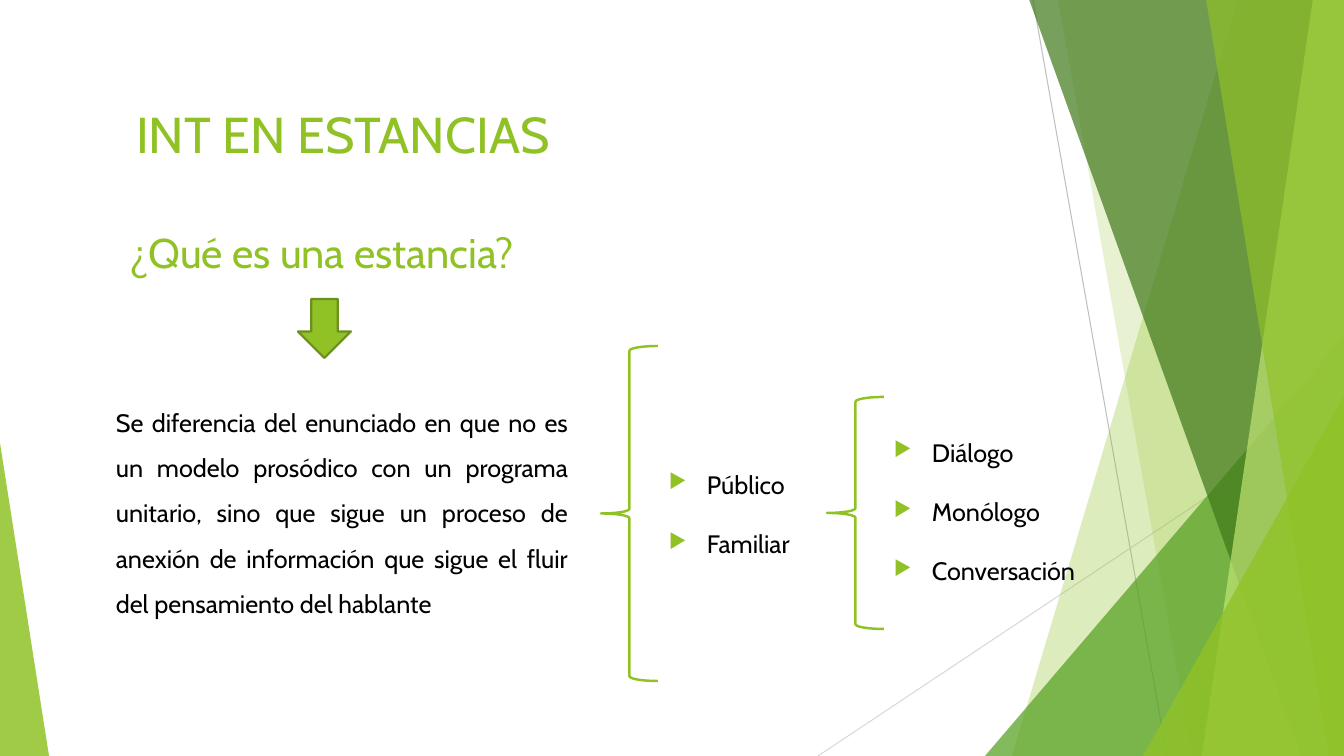
from dataclasses import dataclass

from lxml import etree
from pptx import Presentation
from pptx.dml.color import RGBColor
from pptx.enum.shapes import MSO_CONNECTOR, MSO_SHAPE
from pptx.enum.text import MSO_ANCHOR, MSO_AUTO_SIZE, PP_ALIGN
from pptx.oxml.ns import qn
from pptx.util import Emu, Pt

STRAIGHT = MSO_CONNECTOR.STRAIGHT
TRIANGLE = MSO_SHAPE.ISOSCELES_TRIANGLE
DOWN_ARROW = MSO_SHAPE.DOWN_ARROW
LEFT_BRACE = MSO_SHAPE.LEFT_BRACE
TOP = MSO_ANCHOR.TOP
NO_AUTOFIT = MSO_AUTO_SIZE.NONE
LEFT, JUSTIFY = PP_ALIGN.LEFT, PP_ALIGN.JUSTIFY

SCALE = 914400 / 100.8
WIDTH, HEIGHT = 1344, 756
TITLE_ONLY = 5
FONT = "Cabin"
COLORS = {
    "green": "90C226",
    "leaf": "54A021",
    "forest": "3F7819",
    "lime": "C0E474",
    "arrow_edge": "6B901C",
    "gray": "BFBFBF",
    "light_gray": "D9D9D9",
    "black": "000000",
}


@dataclass(frozen=True)
class Box:
    left: int
    top: int
    width: int
    height: int


@dataclass(frozen=True)
class Ray:
    start: tuple[int, int]
    end: tuple[int, int]
    color: str


@dataclass(frozen=True)
class Band:
    """Strip reaching the right edge of the slide."""
    top_x: int
    bottom_x: int
    color: str
    opacity: int


@dataclass(frozen=True)
class Wedge:
    box: Box
    apex: int
    color: str
    opacity: int


@dataclass(frozen=True)
class TextBlock:
    box: Box
    lines: tuple[str, ...]
    size: float = 18
    color: str = "black"
    align: PP_ALIGN = JUSTIFY
    spacing: float = 1.5
    bullets: bool = False


RAYS = [
    Ray((1033, 0), (1167, HEIGHT), "gray"),
    Ray((WIDTH, 406), (818, HEIGHT), "light_gray"),
]
FACETS = [
    Band(1238, 1012, "green", 30),
    Band(1058, 1192, "green", 20),
    Wedge(Box(985, 336, 359, 420), 1, "leaf", 72),
    Band(1029, 1301, "forest", 70),
    Band(1313, 1202, "lime", 70),
    Band(1206, 1329, "green", 65),
    Wedge(Box(1143, 396, 201, 360), 1, "green", 80),
    Wedge(Box(0, 443, 49, 313), 0, "green", 85),
]
TITLE = TextBlock(Box(126, 98, 451, 96), ("INT EN ESTANCIAS",), 36, "green", LEFT, 1)
TEXTS = [
    TextBlock(Box(120, 222, 530, 58), ("¿Qué es una estancia?",), 29.6, "green", LEFT, 1),
    TextBlock(Box(106, 387, 472, 279), (
        "Se diferencia del enunciado en que no es un modelo prosódico con un "
        "programa unitario, sino que sigue un proceso de anexión de información "
        "que sigue el fluir del pensamiento del hablante",)),
    TextBlock(Box(659, 449, 167, 129), ("Público", "Familiar"), bullets=True),
    TextBlock(Box(884, 417, 226, 192), ("Diálogo", "Monólogo", "Conversación"), bullets=True),
]
ARROW = Box(298, 299, 53, 59)
BRACES = [Box(601, 346, 57, 335), Box(827, 397, 57, 232)]


def px(length: int) -> Emu:
    return Emu(round(length * SCALE))


def rgb(name: str) -> RGBColor:
    return RGBColor.from_string(COLORS[name])


def frame(box: Box) -> tuple[Emu, ...]:
    return px(box.left), px(box.top), px(box.width), px(box.height)


def draw_ray(shapes, ray: Ray) -> None:
    line = shapes.add_connector(STRAIGHT, *map(px, ray.start + ray.end))
    line.line.color.rgb = rgb(ray.color)
    line.line.width = Pt(0.75)
    etree.SubElement(line._element.spPr, qn("a:effectLst"))


def draw_facet(shapes, facet: Band | Wedge) -> None:
    if isinstance(facet, Band):
        builder = shapes.build_freeform(facet.top_x, -1, SCALE)
        builder.add_line_segments(
            [(WIDTH, -1), (WIDTH, HEIGHT), (facet.bottom_x, HEIGHT)], close=True)
        shape = builder.convert_to_shape()
    else:
        shape = shapes.add_shape(TRIANGLE, *frame(facet.box))
        shape.adjustments[0] = facet.apex
    shape.shadow.inherit = False
    shape.line.fill.background()
    shape.fill.solid()
    shape.fill.fore_color.rgb = rgb(facet.color)
    color = shape._element.spPr.find(".//" + qn("a:srgbClr"))
    etree.SubElement(color, qn("a:alpha"), val=str(facet.opacity * 1000))


def draw_outlined(shapes, kind: MSO_SHAPE, box: Box, color: str, width: float,
                  fill: str | None = None) -> None:
    shape = shapes.add_shape(kind, *frame(box))
    shape.shadow.inherit = False
    shape.line.color.rgb = rgb(color)
    shape.line.width = Pt(width)
    if fill:
        shape.fill.solid()
        shape.fill.fore_color.rgb = rgb(fill)
    else:
        shape.fill.background()


def add_bullet(paragraph) -> None:
    paragraph.space_before = Pt(10)
    properties = paragraph._p.get_or_add_pPr()
    properties.set("marL", str(px(38)))
    properties.set("indent", str(-px(38)))
    color = etree.SubElement(properties, qn("a:buClr"))
    etree.SubElement(color, qn("a:srgbClr"), val=COLORS["green"])
    etree.SubElement(properties, qn("a:buSzPct"), val="80000")
    etree.SubElement(properties, qn("a:buChar"), char="▶")


def write_text(shape, block: TextBlock) -> None:
    shape.left, shape.top, shape.width, shape.height = frame(block.box)
    text_frame = shape.text_frame
    text_frame.word_wrap = True
    text_frame.auto_size = NO_AUTOFIT
    text_frame.vertical_anchor = TOP
    text_frame.text = "\n".join(block.lines)
    for paragraph in text_frame.paragraphs:
        paragraph.alignment = block.align
        paragraph.line_spacing = block.spacing
        if block.bullets:
            add_bullet(paragraph)
        paragraph.font.name = FONT
        paragraph.font.size = Pt(block.size)
        paragraph.font.color.rgb = rgb(block.color)


def main() -> None:
    presentation = Presentation()
    presentation.slide_width, presentation.slide_height = px(WIDTH), px(HEIGHT)
    slide = presentation.slides.add_slide(presentation.slide_layouts[TITLE_ONLY])
    shapes = slide.shapes
    for ray in RAYS:
        draw_ray(shapes, ray)
    for facet in FACETS:
        draw_facet(shapes, facet)
    write_text(shapes.title, TITLE)
    for block in TEXTS:
        write_text(shapes.add_textbox(*frame(block.box)), block)
    draw_outlined(shapes, DOWN_ARROW, ARROW, "arrow_edge", 1.5, "green")
    for brace in BRACES:
        draw_outlined(shapes, LEFT_BRACE, brace, "green", 1.75)
    presentation.save("out.pptx")


if __name__ == "__main__":
    main()
